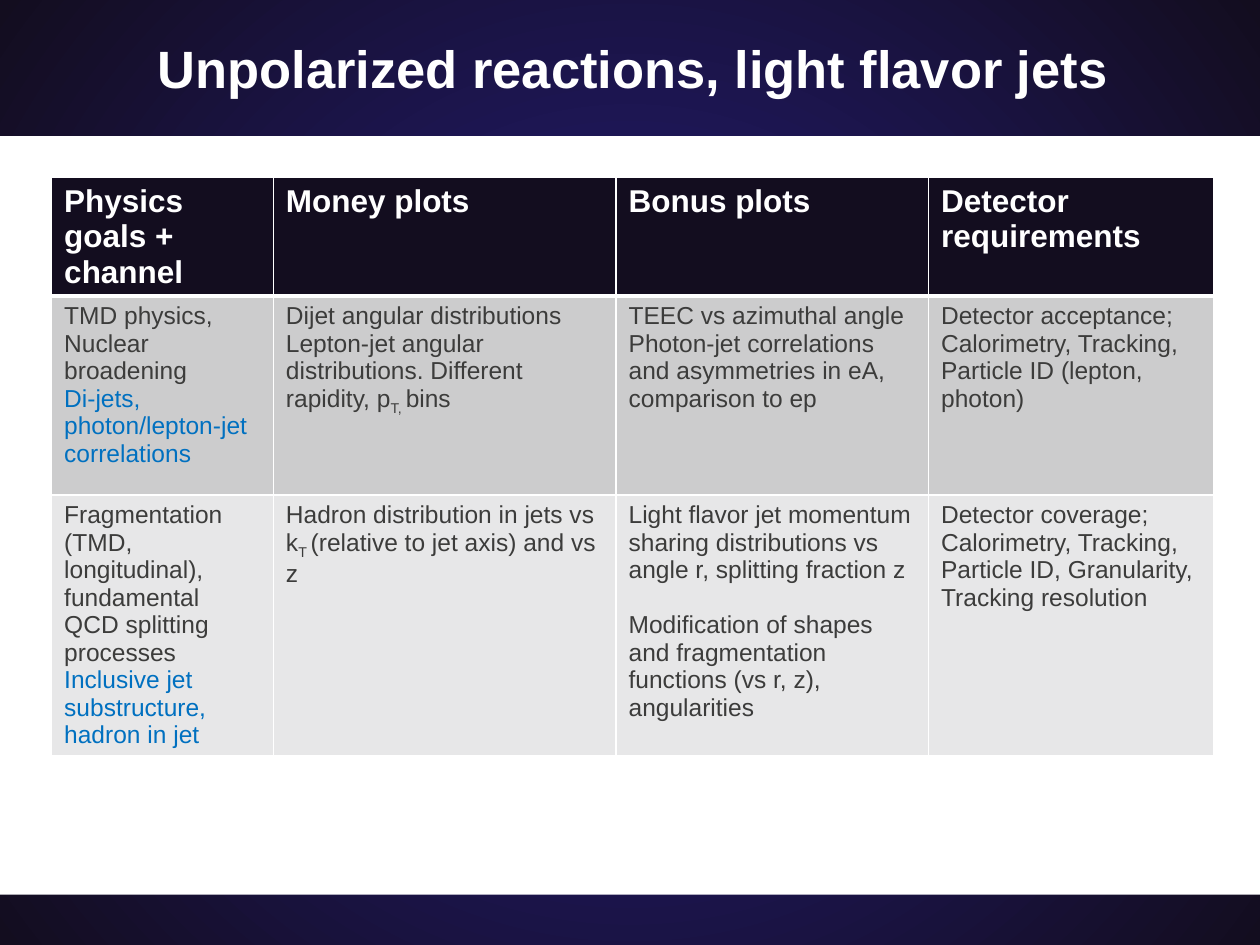
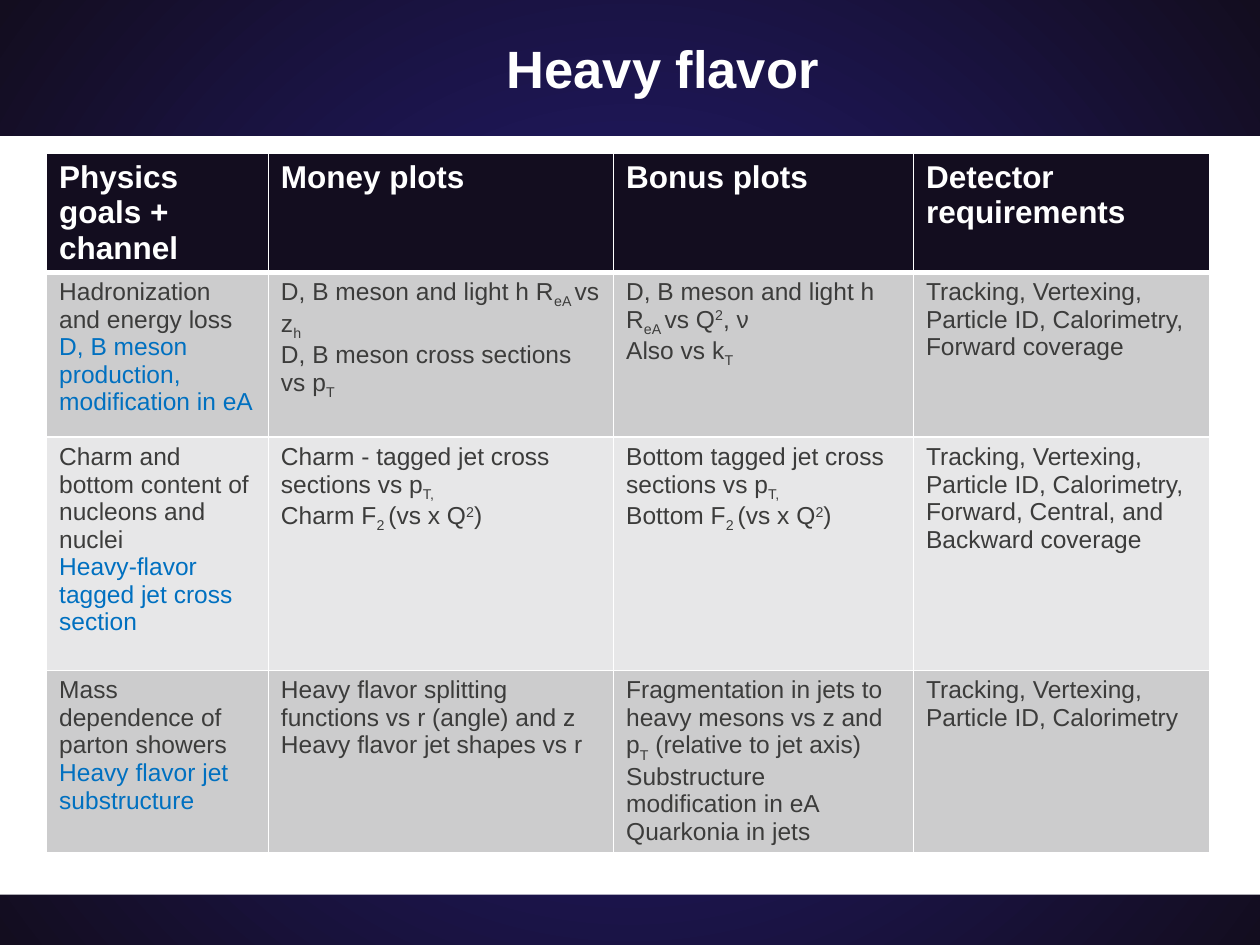
from lxml import etree
from pptx import Presentation
from pptx.dml.color import RGBColor
from pptx.enum.shapes import MSO_SHAPE
from pptx.enum.text import MSO_ANCHOR, MSO_AUTO_SIZE, PP_ALIGN
from pptx.util import Inches, Pt

RECT = MSO_SHAPE.RECTANGLE
MIDDLE = MSO_ANCHOR.MIDDLE
NO_FIT = MSO_AUTO_SIZE.NONE
CENTER = PP_ALIGN.CENTER
A = "http://schemas.openxmlformats.org/drawingml/2006/main"
P = "http://schemas.openxmlformats.org/presentationml/2006/main"

HUES = {"white": "FFFFFF", "glow": "251D7D", "night": "130D1F", "ink": "3C3C3B",
        "blue": "0070C0", "odd": "CCCCCD", "even": "E7E7E8"}
FONTS = {
    "title": {"name": "Arial", "size": Pt(30), "bold": True},
    "head": {"name": "Arial", "size": Pt(18), "bold": True},
    "body": {"name": "Arial", "size": Pt(14), "bold": False},
}
BASES = {"_": "-25000", "^": "30000"}
HEAD = ["Physics goals + channel", "Money plots", "Bonus plots", "Detector requirements"]

# Marks: * blue, > gap above, |_ subscript, |^ superscript
SLIDES = [
    {
        "title": "Unpolarized reactions, light flavor jets",
        "span": (0.92, 8.21),
        "spot": (0.41, 1.41),
        "cols": (1.76, 2.72, 2.48, 2.26),
        "rows": (0.93, 1.58, 2.06),
        "body": [
            [["TMD physics, Nuclear broadening", "*Di-jets, photon/lepton-jet correlations"],
             ["Dijet angular distributions",
              "Lepton-jet angular distributions. Different rapidity, p|_T, |bins"],
             ["TEEC vs azimuthal angle",
              "Photon-jet correlations and asymmetries in eA, comparison to ep"],
             ["Detector acceptance; Calorimetry, Tracking, Particle ID (lepton, photon)"]],
            [["Fragmentation (TMD, longitudinal), fundamental", "QCD splitting processes",
              "*Inclusive jet substructure, hadron in jet"],
             ["Hadron distribution in jets vs k|_T |(relative to jet axis) and vs z"],
             ["Light flavor jet momentum sharing distributions vs angle r, splitting fraction z",
              ">Modification of shapes and fragmentation functions (vs r, z), angularities"],
             ["Detector coverage; Calorimetry, Tracking, Particle ID, Granularity, "
              "Tracking resolution"]],
        ],
    },
    {
        "title": "Heavy flavor",
        "span": (1.89, 6.74),
        "spot": (0.37, 1.22),
        "cols": (1.76, 2.74, 2.38, 2.35),
        "rows": (0.93, 1.31, 1.85, 1.45),
        "body": [
            [["Hadronization and energy loss", "*D, B meson production, modification in eA"],
             ["D, B meson and light h R|_eA |vs z|_h", "D, B meson cross sections vs p|_T"],
             ["D, B meson and light h R|_eA |vs Q|^2|, ν", "Also vs k|_T"],
             ["Tracking, Vertexing, Particle ID, Calorimetry, Forward coverage"]],
            [["Charm and bottom content of nucleons and nuclei",
              "*Heavy-flavor tagged jet cross section"],
             ["Charm - tagged jet cross sections vs p|_T,", "Charm F|_2 |(vs x Q|^2|)"],
             ["Bottom tagged jet cross sections vs p|_T,", "Bottom F|_2 |(vs x Q|^2|)"],
             ["Tracking, Vertexing, Particle ID, Calorimetry, Forward, Central, "
              "and Backward coverage"]],
            [["Mass dependence of parton showers", "*Heavy flavor jet substructure"],
             ["Heavy flavor splitting functions vs r (angle) and z",
              "Heavy flavor jet shapes vs r"],
             ["Fragmentation in jets to heavy mesons vs z and p|_T| (relative to jet axis)",
              "Substructure modification in eA", "Quarkonia in jets"],
             ["Tracking, Vertexing, Particle ID, Calorimetry"]],
        ],
    },
]


def style(font, kind, hue):
    for key, value in FONTS[kind].items():
        setattr(font, key, value)
    font.color.rgb = RGBColor.from_string(HUES[hue])


def write(cell, lines, kind, hue):
    frame = cell.text_frame
    for i, line in enumerate(lines):
        para = frame.add_paragraph() if i else frame.paragraphs[0]
        if line[0] == ">":
            para.space_before = Pt(15.7)
        tone = "blue" if line[0] == "*" else hue
        for part in line.lstrip("*>").split("|"):
            run = para.add_run()
            run.text = part.lstrip("_^")
            style(run.font, kind, tone)
            if part[0] in BASES:
                run._r.get_or_add_rPr().set("baseline", BASES[part[0]])


deck = Presentation()
deck.slide_width, deck.slide_height = Inches(10), Inches(7.5)
layout = deck.slide_layouts[5]
layout.element.cSld.insert(0, etree.fromstring(
    f'<p:bg xmlns:p="{P}" xmlns:a="{A}"><p:bgPr><a:gradFill rotWithShape="1"><a:gsLst>'
    f'<a:gs pos="0"><a:srgbClr val="{HUES["glow"]}"/></a:gs>'
    f'<a:gs pos="100000"><a:srgbClr val="{HUES["night"]}"/></a:gs></a:gsLst>'
    '<a:path path="circle"><a:fillToRect l="50000" t="50000" r="50000" b="50000"/></a:path>'
    '</a:gradFill><a:effectLst/></p:bgPr></p:bg>'))

for n, page in enumerate(SLIDES):
    slide = deck.slides.add_slide(layout)
    if n == 0:
        band = slide.shapes.add_shape(RECT, 0, Inches(1.08), Inches(10), Inches(6.02))
        band.shadow.inherit = False
        band.fill.solid()
        band.fill.fore_color.rgb = RGBColor.from_string(HUES["white"])
        band.line.fill.background()
        layout.shapes.element.insert(2, band.element)

    title = slide.shapes.title
    left, width = page["span"]
    title.left, title.top = Inches(left), 0
    title.width, title.height = Inches(width), Inches(1.08)
    frame = title.text_frame
    frame.text = page["title"]
    frame.auto_size = NO_FIT
    frame.vertical_anchor = MIDDLE
    frame.paragraphs[0].alignment = CENTER
    style(frame.paragraphs[0].runs[0].font, "title", "white")

    cols, rows = page["cols"], page["rows"]
    left, top = page["spot"]
    table = slide.shapes.add_table(len(rows), len(cols), Inches(left), Inches(top),
                                   Inches(sum(cols)), Inches(sum(rows))).table
    for col, width in zip(table.columns, cols):
        col.width = Inches(width)
    for row, height in zip(table.rows, rows):
        row.height = Inches(height)

    grid = [[[name] for name in HEAD]] + page["body"]
    for r, line in enumerate(grid):
        kind, hue = ("body", "ink") if r else ("head", "white")
        shade = ("even", "odd")[r % 2] if r else "night"
        for c, lines in enumerate(line):
            cell = table.cell(r, c)
            write(cell, lines, kind, hue)
            cell.fill.solid()
            cell.fill.fore_color.rgb = RGBColor.from_string(HUES[shade])
            sides = {"L": 1, "R": 1, "T": 3 if r == 1 else 1, "B": 1 if r else 3}
            for i, (side, size) in enumerate(sides.items()):
                cell._tc.get_or_add_tcPr().insert(i, etree.fromstring(
                    f'<a:ln{side} xmlns:a="{A}" w="{Pt(size)}"><a:solidFill>'
                    f'<a:srgbClr val="{HUES["white"]}"/></a:solidFill></a:ln{side}>'))

deck.save("out.pptx")
